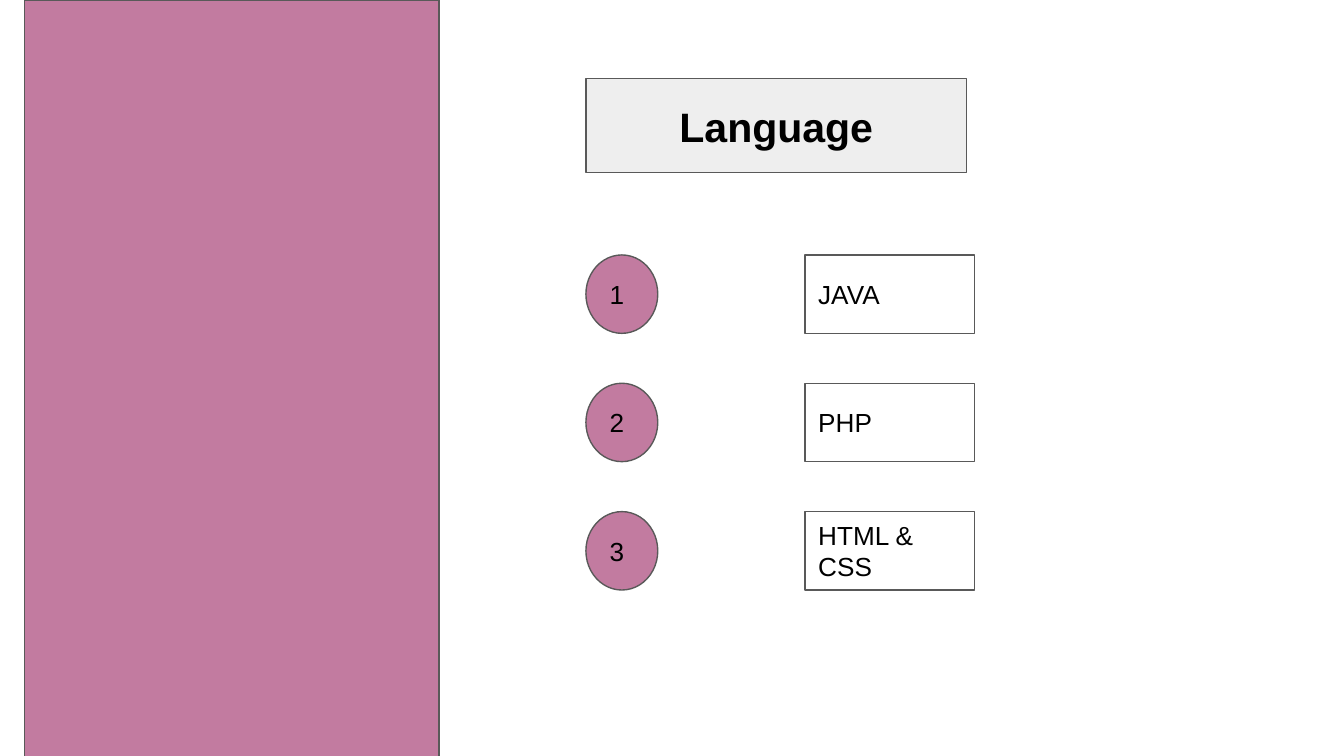
from pptx import Presentation
from pptx import util as u
from pptx.dml import color
from pptx.enum import shapes, text

COLORS = {
    "accent": "C27BA0",
    "heading": "EEEEEE",
    "label": "FFFFFF",
    "outline": "595959",
    "ink": "000000",
}
LANGUAGES = ["JAVA", "PHP", "HTML & CSS"]
CONTENT_LEFT = 313.9
LABEL_LEFT = 431.2
FIRST_ROW_TOP = 136.6
ROW_PITCH = 68.75
ROW_HEIGHT = 42


def rgb(name):
    return color.RGBColor.from_string(COLORS[name])


def add_box(slide, kind, left, top, width, height, fill):
    box = slide.shapes.add_shape(kind, u.Pt(left), u.Pt(top), u.Pt(width), u.Pt(height))
    box.shadow.inherit = False
    box.fill.solid()
    box.fill.fore_color.rgb = rgb(fill)
    box.line.color.rgb = rgb("outline")
    box.line.width = u.Pt(0.75)
    return box


def write(box, content, size=14, bold=False, align=text.PP_ALIGN.LEFT):
    frame = box.text_frame
    frame.word_wrap = True
    frame.vertical_anchor = text.MSO_ANCHOR.MIDDLE
    frame.margin_left = frame.margin_right = u.Pt(7.2)
    frame.margin_top = frame.margin_bottom = u.Pt(7.2)
    paragraph = frame.paragraphs[0]
    paragraph.alignment = align
    run = paragraph.add_run()
    run.text = content
    run.font.name = "Arial"
    run.font.size = u.Pt(size)
    run.font.bold = bold
    run.font.color.rgb = rgb("ink")


def add_language(slide, number, language):
    top = FIRST_ROW_TOP + (number - 1) * ROW_PITCH
    badge = add_box(slide, shapes.MSO_SHAPE.FLOWCHART_CONNECTOR,
                    CONTENT_LEFT, top, 38.5, ROW_HEIGHT, "accent")
    write(badge, str(number))
    label = add_box(slide, shapes.MSO_SHAPE.RECTANGLE,
                    LABEL_LEFT, top, 90.9, ROW_HEIGHT, "label")
    write(label, language)


def main():
    deck = Presentation()
    deck.slide_width, deck.slide_height = u.Pt(720), u.Pt(405)
    slide = deck.slides.add_slide(deck.slide_layouts[6])

    add_box(slide, shapes.MSO_SHAPE.FLOWCHART_PROCESS, 13, 0, 222.3, 407, "accent")
    heading = add_box(slide, shapes.MSO_SHAPE.RECTANGLE,
                      CONTENT_LEFT, 42, 203.9, 50.6, "heading")
    write(heading, "Language", size=22, bold=True, align=text.PP_ALIGN.CENTER)
    for number, language in enumerate(LANGUAGES, start=1):
        add_language(slide, number, language)

    deck.save("out.pptx")


if __name__ == "__main__":
    main()
